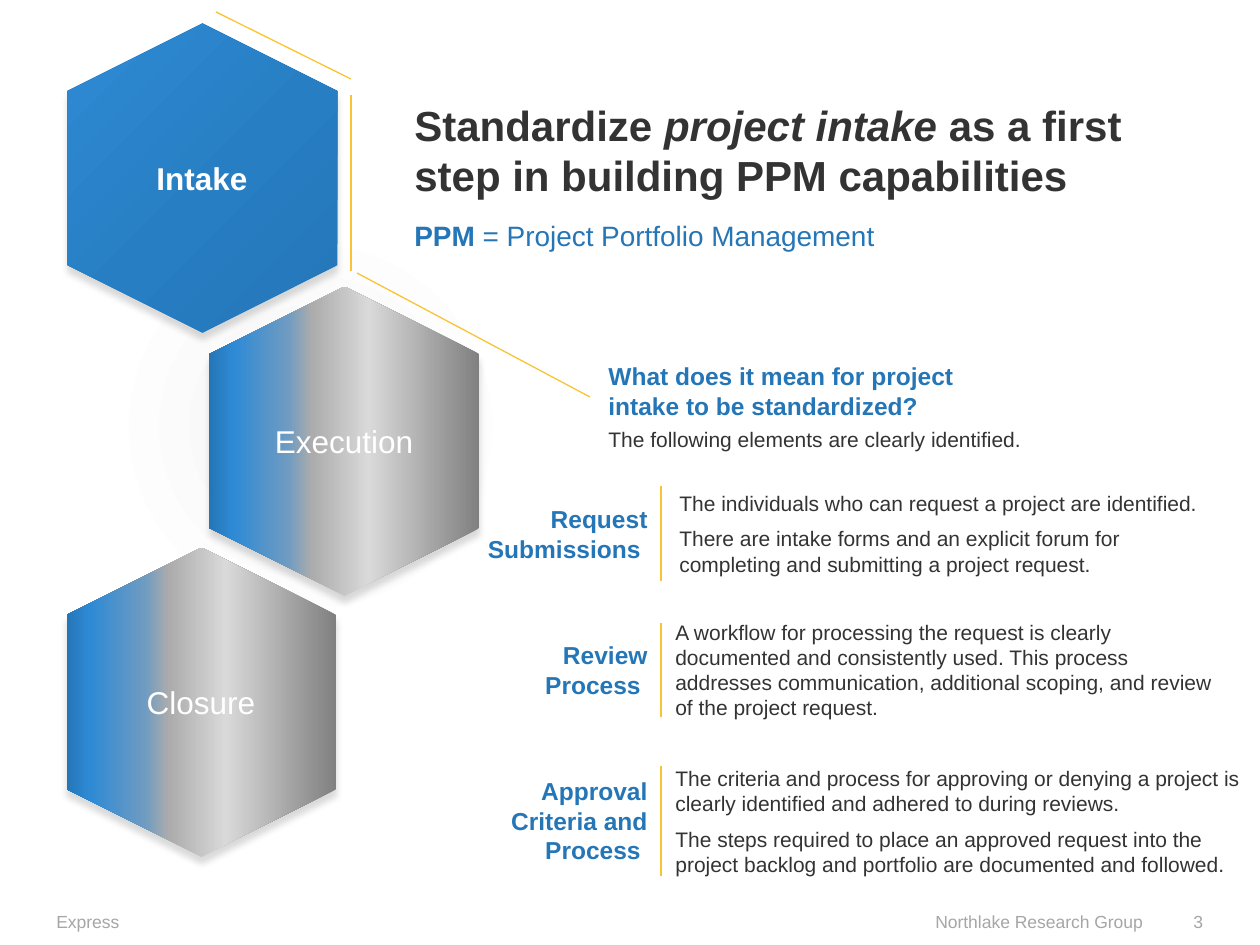
from lxml import etree
from pptx import Presentation, util as u
from pptx.dml.color import RGBColor
from pptx.enum import shapes, text
from pptx.oxml import parse_xml
from pptx.oxml.ns import nsdecls, qn

PX = 914400 / 126
FONT = "Arial"
BLUE = RGBColor(0x25, 0x76, 0xB7)
DARK = RGBColor(0x33, 0x33, 0x33)
GOLD = RGBColor(0xF8, 0xC4, 0x35)
GREY = RGBColor(0xA6, 0xA6, 0xA6)
WHITE = RGBColor(0xFF, 0xFF, 0xFF)

# Gradients: stops as (percent, colour), then the direction
HALO = ([(0, "F2F2F2"), (41, "FFFFFF"), (55, "FFFFFF")],
        '<a:path path="circle"><a:fillToRect l="50000" t="50000" r="50000" b="50000"/></a:path>')
ACTIVE = ([(0, "2576B7"), (46, "277EC3"), (100, "2F8AD5")], '<a:lin ang="18900000" scaled="0"/>')
INACTIVE = ([(0, "808080"), (41, "D9D9D9"), (62, "ACACAC"), (71, "6E9BC1"),
             (91, "2F8AD5"), (100, "2576B7")], '<a:lin ang="16200000" scaled="0"/>')

BODY = {"size": 12, "color": DARK}
HEADING = {"size": 14, "color": BLUE, "bold": True}
FOOTER = {"size": 10, "color": GREY}


def px(*lengths):
    return [u.Emu(round(n * PX)) for n in lengths]


class SlideBuilder:
    def __init__(self, prs):
        self.slide = prs.slides.add_slide(prs.slide_layouts[6])

    def text(self, box, paragraphs, style, align="LEFT", after=0, anchor="TOP", wrap=True):
        """Each paragraph is a string or a list of (string, font overrides)."""
        frame = self.slide.shapes.add_textbox(*px(*box)).text_frame
        frame.word_wrap = wrap
        frame.vertical_anchor = getattr(text.MSO_ANCHOR, anchor)
        for i, content in enumerate(paragraphs):
            para = frame.add_paragraph() if i else frame.paragraphs[0]
            para.alignment = getattr(text.PP_ALIGN, align)
            para.space_after = u.Pt(after)
            for words, extra in [(content, {})] if isinstance(content, str) else content:
                run = para.add_run()
                run.text = words
                look = {"name": FONT, **style, **extra}
                run.font.color.rgb = look.pop("color")
                run.font.size = u.Pt(look.pop("size"))
                for key, value in look.items():
                    setattr(run.font, key, value)

    def gradient_shape(self, kind, box, gradient, rotation=0, shadow=False):
        shape = self.slide.shapes.add_shape(kind, *px(*box))
        shape.rotation = rotation
        stops, direction = gradient
        stop_xml = "".join(f'<a:gs pos="{pos * 1000}"><a:srgbClr val="{color}"/></a:gs>'
                           for pos, color in stops)
        fill = parse_xml(f'<a:gradFill {nsdecls("a")} rotWithShape="1">'
                         f'<a:gsLst>{stop_xml}</a:gsLst>{direction}</a:gradFill>')
        properties = shape.element.spPr
        properties.find(qn("a:prstGeom")).addnext(fill)
        shape.line.fill.background()
        shape.shadow.inherit = False
        if shadow:
            properties.find(qn("a:effectLst")).append(parse_xml(
                f'<a:outerShdw {nsdecls("a")} blurRad="50800" dist="50800" dir="5400000" '
                'rotWithShape="0"><a:srgbClr val="000000"><a:alpha val="14000"/>'
                '</a:srgbClr></a:outerShdw>'))

    def line(self, ends, width):
        line = self.slide.shapes.add_connector(shapes.MSO_CONNECTOR.STRAIGHT, *px(*ends))
        line.line.color.rgb = GOLD
        line.line.width = u.Pt(width)
        etree.SubElement(line.element.spPr, qn("a:effectLst"))


def main():
    prs = Presentation()
    prs.slide_width, prs.slide_height = px(1260, 945)
    page = SlideBuilder(prs)

    # Footer
    page.text((44, 898, 300, 47), ["Express"], FOOTER, anchor="MIDDLE")
    page.text((755, 898, 400, 47), ["Northlake Research Group"], FOOTER, "RIGHT", anchor="MIDDLE")
    page.text((1181, 898, 79, 47), ["3"], FOOTER, anchor="MIDDLE")

    # Phase hexagons, standing on a point, over a faint halo
    page.gradient_shape(shapes.MSO_SHAPE.OVAL, (0, 13, 621, 827), HALO)
    width, height = 309, 270
    for phase, left, top, gradient, bold in [("Intake", 48, 43, ACTIVE, True),
                                             ("Execution", 190, 306, INACTIVE, False),
                                             ("Closure", 47, 567, INACTIVE, False)]:
        page.gradient_shape(shapes.MSO_SHAPE.HEXAGON, (left, top, width, height), gradient,
                            rotation=270, shadow=True)
        page.text((left + width // 2 - 82, top + height // 2 - 25, 164, 50), [phase],
                  {"size": 18, "color": WHITE, "bold": bold}, "CENTER", wrap=False)

    # Title and abbreviation
    page.text((402, 93, 780, 118),
              [[("Standardize ", {}), ("project intake ", {"italic": True}),
                ("as a first step in building PPM capabilities", {})]],
              {"size": 24, "color": DARK, "bold": True})
    page.text((402, 212, 662, 47),
              [[("PPM", {"bold": True}), (" = Project Portfolio Management", {})]],
              {"size": 16, "color": BLUE})

    # Outline that follows the hexagon edges
    for ends in [(590, 397, 357, 273), (351, 95, 351, 271), (216, 12, 351, 79)]:
        page.line(ends, 0.75)

    # Question
    page.text((596, 355, 403, 72),
              ["What does it mean for project intake to be standardized?"], HEADING)
    page.text((596, 420, 630, 38), ["The following elements are clearly identified."], BODY)

    # Elements: label and box, rule span, description box and paragraphs
    elements = [
        ("Request Submissions ", (445, 498, 215, 72), (486, 581), (667, 484, 570, 100),
         ["The individuals who can request a project are identified.",
          "There are intake forms and an explicit forum for completing and submitting "
          "a project request."]),
        ("Review Process ", (488, 634, 172, 72), (623, 717), (663, 613, 570, 115),
         ["A workflow for processing the request is clearly documented and consistently used. "
          "This process addresses communication, additional scoping, and review of the "
          "project request."]),
        ("Approval Criteria and Process ", (445, 770, 215, 102), (766, 876), (663, 759, 600, 125),
         ["The criteria and process for approving or denying a project is clearly identified "
          "and adhered to during reviews.",
          "The steps required to place an approved request into the project backlog and "
          "portfolio are documented and followed."]),
    ]
    for label, label_box, (top, bottom), body_box, description in elements:
        page.text(label_box, [label], HEADING, "RIGHT", after=6)
        page.line((661, bottom, 661, top), 1.5)
        page.text(body_box, description, BODY, after=6)

    prs.save("out.pptx")


if __name__ == "__main__":
    main()
